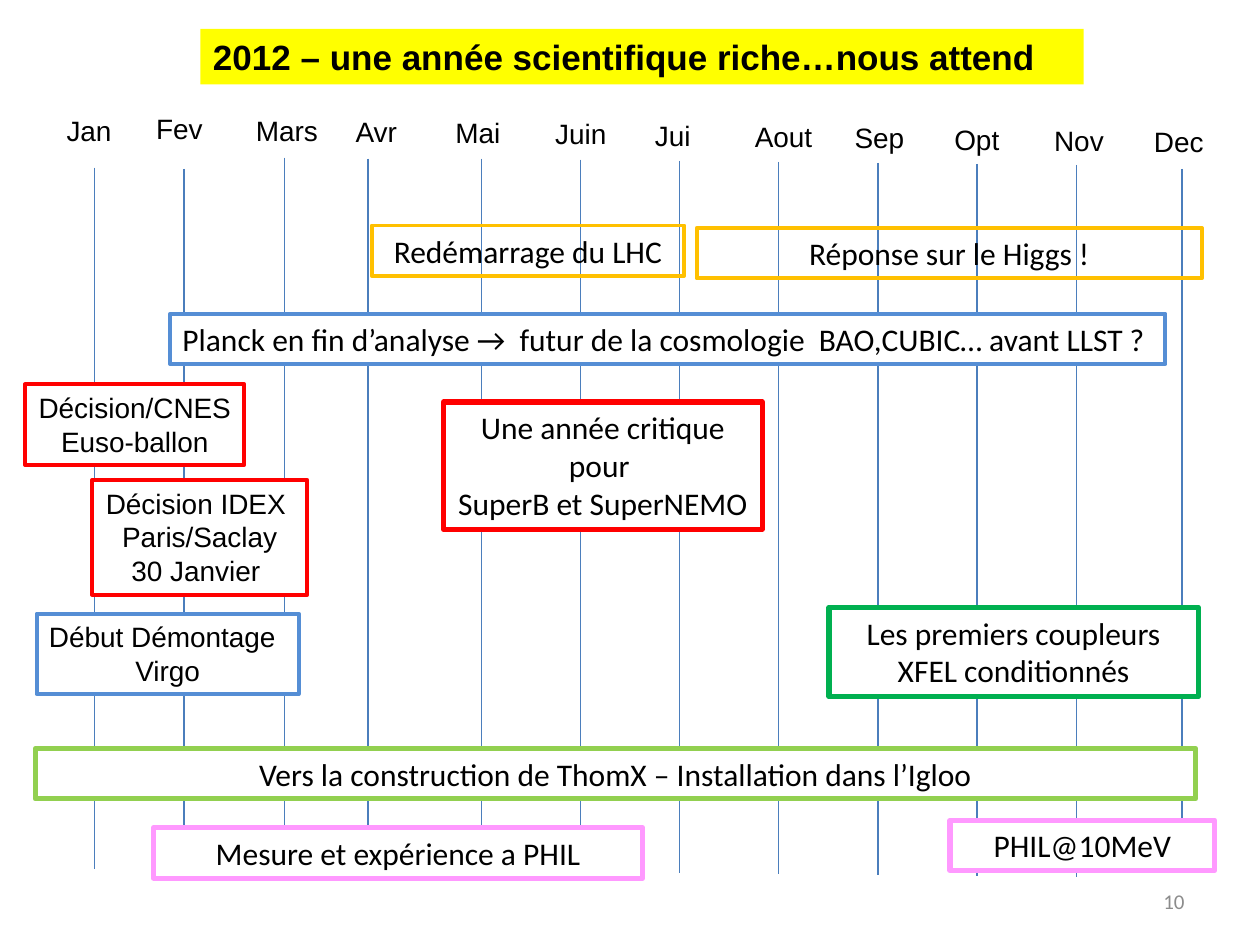
from lxml import etree
from pptx import Presentation
from pptx.dml.color import RGBColor
from pptx.enum.shapes import MSO_CONNECTOR, MSO_SHAPE
from pptx.enum.text import MSO_ANCHOR, MSO_AUTO_SIZE, PP_ALIGN
from pptx.oxml.ns import qn
from pptx.util import Inches, Pt

LEFT, CENTER, RIGHT = PP_ALIGN.LEFT, PP_ALIGN.CENTER, PP_ALIGN.RIGHT
TITLE_ONLY = 5
BLACK, WHITE, YELLOW = "000000", "FFFFFF", "FFFF00"
RED, BLUE, ORANGE = "FF0000", "558ED5", "FFC000"
GREEN, LIME, PINK = "00B050", "92D050", "FF99FF"
LINE_BLUE, GREY = "4B7EBC", "8C8C8C"

MONTHS = ["Jan", "Fev", "Mars", "Avr", "Mai", "Juin",
          "Jui", "Aout", "Sep", "Opt", "Nov", "Dec"]
WIDE_MONTHS = ("Mars", "Aout")

# Month lines: x, top, bottom; May to November are evenly spaced
MONTH_LINES = [(0.75, 1.33, 6.9), (1.46, 1.34, 6.9), (2.26, 1.25, 6.9), (2.92, 1.26, 6.91)]
MONTH_LINES += [(3.82 + 0.787 * step, 1.26 + 0.008 * step, 6.91 + 0.008 * step)
                for step in range(7)]
MONTH_LINES += [(9.38, 1.34, 6.55)]

# Events: text, (left, top, width, height), border, border width, font, size, fill
EVENTS = [
    ("Décision IDEX \nParis/Saclay\n30 Janvier ", (0.73, 3.81, 1.71, 0.91),
     RED, 2.25, "Arial", 16, WHITE),
    ("Décision/CNES Euso-ballon", (0.2, 3.05, 1.74, 0.64), RED, 2.25, "Arial", 16, WHITE),
    ("Planck en fin d’analyse →  futur de la cosmologie  BAO,CUBIC… avant LLST ?",
     (1.35, 2.49, 7.9, 0.4), BLUE, 2.25, "Calibri", 18, WHITE),
    ("Réponse sur le Higgs !", (5.53, 1.81, 4.01, 0.4), ORANGE, 2.25, "Calibri", 18, None),
    ("Mesure et expérience a PHIL", (1.22, 6.57, 3.88, 0.4), PINK, 3, "Calibri", 18, WHITE),
    ("Les premiers coupleurs XFEL conditionnés", (6.58, 4.82, 2.93, 0.71),
     GREEN, 3, "Calibri", 18, WHITE),
    ("Une année critique pour \nSuperB et SuperNEMO", (3.52, 3.19, 2.53, 1.01),
     RED, 3, "Calibri", 18, WHITE),
    ("Vers la construction de ThomX – Installation dans l’Igloo", (0.28, 5.94, 9.21, 0.4),
     LIME, 3, "Calibri", 18, WHITE),
    ("Redémarrage du LHC", (2.95, 1.79, 2.48, 0.4), ORANGE, 2.25, "Calibri", 18, None),
    ("Début Démontage\nVirgo", (0.29, 4.87, 2.08, 0.64), BLUE, 2.25, "Arial", 16, WHITE),
    ("PHIL@10MeV", (7.54, 6.51, 2.1, 0.4), PINK, 3, "Calibri", 18, WHITE),
]
UNWRAPPED = ("Décision IDEX", "Début Démontage")
LEFT_STARTS = ("Planck", "Début Démontage")


def rgb(color):
    return RGBColor.from_string(color)


def write_text(shape, text, font, size, color=BLACK, align=LEFT, bold=False,
               wrap=True, anchor=MSO_ANCHOR.TOP):
    frame = shape.text_frame
    frame.text = text
    frame.word_wrap = wrap
    frame.auto_size = MSO_AUTO_SIZE.NONE
    frame.vertical_anchor = anchor
    for paragraph in frame.paragraphs:
        paragraph.alignment = align
        for run in paragraph.runs:
            run.font.name = font
            run.font.size = Pt(size)
            run.font.bold = bold
            run.font.color.rgb = rgb(color)


def add_title(slide, text, box):
    title = slide.shapes.title
    title.left, title.top, title.width, title.height = map(Inches, box)
    title.fill.solid()
    title.fill.fore_color.rgb = rgb(YELLOW)
    write_text(title, text, "Arial", 20, bold=True, wrap=False)


def add_label(slide, text, box, font, size, **style):
    label = slide.shapes.add_textbox(*map(Inches, box))
    write_text(label, text, font, size, **style)


def add_month_line(slide, x, top, bottom):
    line = slide.shapes.add_connector(
        MSO_CONNECTOR.STRAIGHT, Inches(x), Inches(top), Inches(x), Inches(bottom))
    line.line.color.rgb = rgb(LINE_BLUE)
    line.line.width = Pt(0.75)
    etree.SubElement(line._element.spPr, qn("a:effectLst"))


def add_event(slide, text, box, border, border_width, font, size, fill):
    event = slide.shapes.add_shape(MSO_SHAPE.RECTANGLE, *map(Inches, box))
    event.shadow.inherit = False
    event.line.color.rgb = rgb(border)
    event.line.width = Pt(border_width)
    if fill:
        event.fill.solid()
        event.fill.fore_color.rgb = rgb(fill)
    else:
        event.fill.background()
    write_text(event, text, font, size, align=CENTER, wrap=not text.startswith(UNWRAPPED))
    if text.startswith(LEFT_STARTS):
        event.text_frame.paragraphs[0].alignment = LEFT


def add_months(slide):
    for line in MONTH_LINES:
        add_month_line(slide, *line)
    # Labels drift slightly down from February on
    for index, month in enumerate(MONTHS):
        step = index - 1
        left, top = (1.14 + 0.792 * step, 0.84 + 0.01 * step) if index else (0.43, 0.85)
        width = 0.79 if month in WIDE_MONTHS else 0.64
        add_label(slide, month, (left, top, width, 0.37), "Arial", 16)


def main():
    presentation = Presentation()
    presentation.slide_width = Inches(10)
    presentation.slide_height = Inches(7.5)
    slide = presentation.slides.add_slide(presentation.slide_layouts[TITLE_ONLY])

    add_title(slide, "2012 – une année scientifique riche…nous attend",
              (1.59, 0.23, 7.01, 0.44))
    add_months(slide)
    for event in EVENTS:
        add_event(slide, *event)

    # Slide number
    add_label(slide, "10", (7.17, 6.95, 2.33, 0.4), "Calibri", 12,
              color=GREY, align=RIGHT, anchor=MSO_ANCHOR.MIDDLE)
    presentation.save("out.pptx")


if __name__ == "__main__":
    main()
